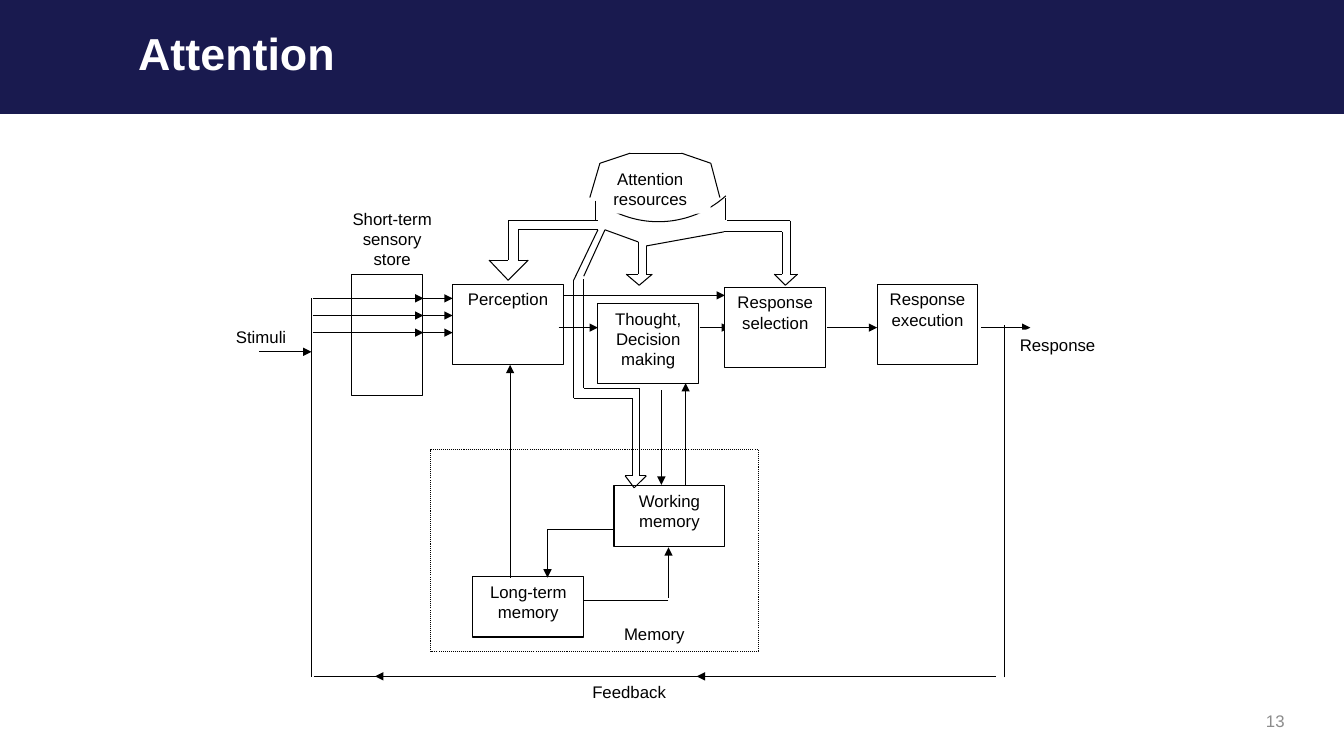
from math import cos, radians, sin

from lxml.etree import SubElement
from pptx import Presentation
from pptx.dml.color import RGBColor
from pptx.enum.dml import MSO_LINE
from pptx.enum.shapes import MSO_CONNECTOR, MSO_SHAPE
from pptx.enum.text import MSO_ANCHOR, MSO_AUTO_SIZE, PP_ALIGN
from pptx.oxml.ns import qn
from pptx.util import Pt

PX = 9144  # EMU in one px, 100 px to the inch


def rgb(text):
    return RGBColor.from_string(text)


class Board:
    font, ink, paper, navy, gray = "Arial", "000000", "FFFFFF", "191A4F", "8C8C8C"

    def __init__(self, deck):
        self.layout = deck.slide_layouts[5]
        self.slide = deck.slides.add_slide(self.layout)
        self.shapes = self.slide.shapes

    def fit(self, shape, text, size=12, color=ink, align=PP_ALIGN.CENTER,
            anchor=MSO_ANCHOR.TOP, bold=False):
        frame = shape.text_frame
        frame.text = text
        frame.word_wrap = True
        frame.auto_size = MSO_AUTO_SIZE.NONE
        frame.vertical_anchor = anchor
        for para in frame.paragraphs:
            para.alignment = align
            for run in para.runs:
                run.font.name = self.font
                run.font.size = Pt(size)
                run.font.bold = bold
                run.font.color.rgb = rgb(color)

    def stroke(self, line):
        line.color.rgb = rgb(self.ink)
        line.width = Pt(0.75)

    def box(self, x, y, w, h, text="", fill=paper, edge=True, dash=None):
        shape = self.shapes.add_shape(
            MSO_SHAPE.RECTANGLE, x * PX, y * PX, w * PX, h * PX)
        shape.shadow.inherit = False
        shape.fill.solid()
        shape.fill.fore_color.rgb = rgb(fill)
        if edge:
            self.stroke(shape.line)
            if dash:
                shape.line.dash_style = dash
        else:
            shape.line.fill.background()
        if text:
            self.fit(shape, text)
        return shape

    def label(self, x, y, w, h, text, **style):
        shape = self.shapes.add_textbox(x * PX, y * PX, w * PX, h * PX)
        self.fit(shape, text, **style)

    def line(self, x1, y1, x2, y2, head=False):
        link = self.shapes.add_connector(
            MSO_CONNECTOR.STRAIGHT, x1 * PX, y1 * PX, x2 * PX, y2 * PX)
        self.stroke(link.line)
        props = link._element.spPr
        if head:
            SubElement(props.find(qn("a:ln")), qn("a:tailEnd"), type="triangle")
        SubElement(props, qn("a:effectLst"))

    def chain(self, *points):
        for start, end in zip(points, points[1:]):
            self.line(*start, *end)

    def arc(self, x, y, radius, start, end):
        points = [(round((x + radius * cos(radians(a))) * PX),
                   round((y + radius * sin(radians(a))) * PX))
                  for a in range(start, end + 1)]
        pen = self.shapes.build_freeform(*points[0])
        pen.add_line_segments(points[1:], close=False)
        shape = pen.convert_to_shape()
        shape.shadow.inherit = False
        shape.fill.background()
        self.stroke(shape.line)

    def band(self, h):
        shape = self.box(0, 0, 1333, h, fill=self.navy, edge=False)
        self.layout.shapes._spTree.insert(2, shape._element)

    def title(self, x, y, w, h, text):
        shape = self.shapes.title
        shape.left, shape.top, shape.width, shape.height = (
            n * PX for n in (x, y, w, h))
        self.fit(shape, text, 32, self.paper, PP_ALIGN.LEFT,
                 MSO_ANCHOR.MIDDLE, True)
        shape.text_frame.paragraphs[0].line_spacing = 0.9


def main():
    deck = Presentation()
    deck.slide_width, deck.slide_height = 1333 * PX, 750 * PX
    board = Board(deck)

    # Header and page number
    board.band(113)
    board.title(127, -1, 1157, 113, "Attention")
    board.label(966, 695, 318, 40, "13", color=board.gray,
                align=PP_ALIGN.RIGHT, anchor=MSO_ANCHOR.MIDDLE)

    # Lower edge of the resource pool
    board.arc(653, 120, 100, 48, 131)

    # Memory area and feedback loop
    board.box(574, 671, 100, 45, "Feedback", edge=False)
    board.box(427, 446, 325, 200, dash=MSO_LINE.ROUND_DOT)
    board.box(209, 319, 100, 45, "Stimuli", edge=False)
    board.line(309, 296, 309, 672)
    board.line(311, 671, 988, 671)
    board.line(996, 672, 996, 322)
    board.label(599, 614, 100, 45, "Memory")

    # Stages
    for x, y, w, h, text in (
            (469, 572, 110, 60, "Long-term memory"),
            (609, 482, 110, 60, "Working memory"),
            (449, 282, 110, 80, "Perception"),
            (593, 301, 100, 80, "Thought,\nDecision making"),
            (870, 282, 100, 80, "Response execution")):
        board.box(x, y, w, h, text)
    board.box(339, 202, 100, 80, "Short-term sensory store", edge=False)
    board.box(349, 272, 70, 120)
    board.box(585, 162, 120, 50, "Attention resources", edge=False)

    # Outline of the resource pool
    board.chain((585, 196), (595, 162), (625, 152), (676, 152),
                (705, 162), (714, 196))
    board.line(720, 196, 720, 218)
    board.line(591, 199, 591, 219)

    # Block arrow to perception
    board.chain((593, 219), (504, 219), (504, 258), (485, 258), (504, 278),
                (524, 258), (514, 258), (514, 228), (593, 228))
    # Block arrow to working memory
    board.chain((593, 228), (569, 278), (569, 395), (627, 395), (627, 472),
                (620, 472), (629, 484), (641, 472), (634, 472), (634, 385),
                (579, 385), (579, 277))
    # Block arrows to thought and response selection
    board.chain((579, 274), (600, 228), (633, 240), (633, 272), (621, 272),
                (634, 283), (647, 272), (641, 272), (641, 244), (718, 230),
                (776, 230), (776, 272), (768, 272), (779, 283), (791, 272),
                (784, 272), (784, 219), (721, 219))

    # Three parallel sensory channels
    for y in (296, 313, 330):
        board.line(310, y, 420, y, True)
        board.line(420, y, 449, y, True)

    # Flow between stages
    for ends in (
            (257, 349, 309, 349), (559, 293, 719, 293), (554, 325, 593, 325),
            (694, 325, 724, 325), (820, 325, 870, 325), (973, 325, 1022, 325),
            (506, 573, 506, 362), (656, 387, 656, 481), (680, 482, 680, 380),
            (543, 525, 543, 573), (663, 593, 663, 543),
            (763, 671, 691, 671), (431, 671, 372, 671)):
        board.line(*ends, True)
    board.line(543, 525, 609, 525)
    board.line(663, 596, 579, 596)

    # Response, in front of the flow
    board.box(719, 285, 100, 80, "Response selection")
    board.box(999, 327, 100, 45, "Response", edge=False)

    deck.save("out.pptx")


if __name__ == "__main__":
    main()
